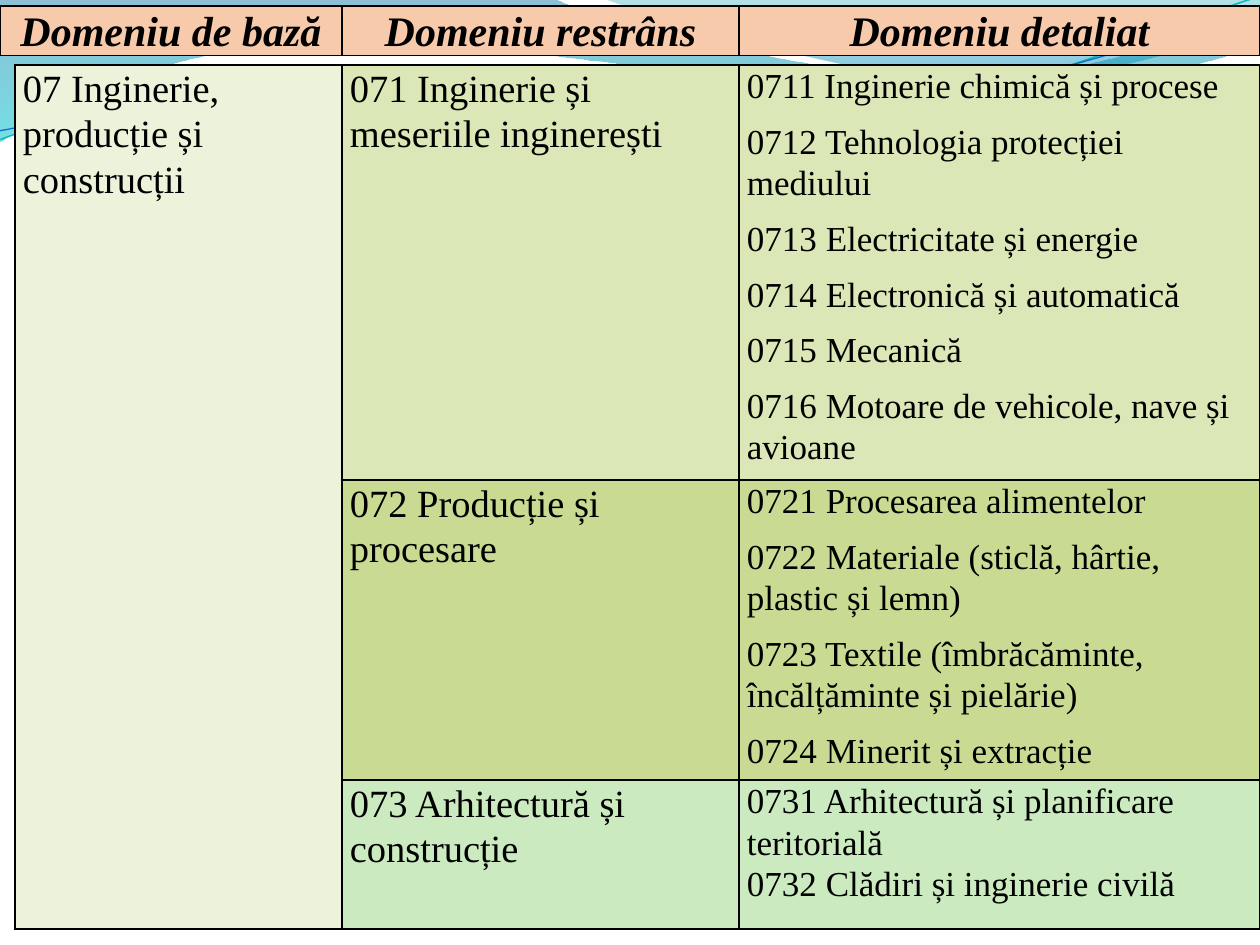
from lxml import etree
from pptx import Presentation
from pptx.dml.color import RGBColor as RGB
from pptx.enum.text import PP_ALIGN as Align
from pptx.oxml.ns import qn
from pptx.util import Pt

PX = 914400 / 126
FONT = "Times New Roman"
COLORS = {
    "ink": "000000", "header": "F7CAAC", "base": "EDF3DB",
    "engineering": "DBE7B6", "production": "C9DA92", "building": "CBEAC0",
    "deep": "0074A1", "cyan": "00C6CF", "teal": "00A1A9", "azure": "008BBF",
    "aqua": "0AB8BF", "blue": "0F6FC6",
}
HEADERS = ["Domeniu de bază", "Domeniu restrâns", "Domeniu detaliat"]
BASE = "07 Inginerie, producție și construcții"
FIELDS = [
    ("071 Inginerie și meseriile inginerești", "engineering", 415, [
        "0711 Inginerie chimică și procese",
        "0712 Tehnologia protecției mediului",
        "0713 Electricitate și energie",
        "0714 Electronică și automatică",
        "0715 Mecanică",
        "0716 Motoare de vehicole, nave și avioane"]),
    ("072 Producție și procesare", "production", 300, [
        "0721 Procesarea alimentelor",
        "0722 Materiale (sticlă, hârtie, plastic și lemn)",
        "0723 Textile (îmbrăcăminte, încălțăminte și pielărie)",
        "0724 Minerit și extracție"]),
    ("073 Arhitectură și construcție", "building", 149, [
        "0731 Arhitectură și planificare teritorială\v0732 Clădiri și inginerie civilă"]),
]
LOWER_WAVE = [
    (0, 0), (554, -1), (600, 21, 837, 79, 955, 79), (1075, 79, 1207, 33, 1260, 11),
    (1261, 45), (1239, 55, 1096, 96, 940, 94), (784, 94, 481, 35, 324, 43),
    (163, 45, 58, 105, -1, 142), (0, 0)]
UPPER_WAVE = [
    (604, -1), (641, 14, 859, 78, 969, 82), (1079, 87, 1211, 40, 1260, 26),
    (1260, 0), (604, -1)]
AQUA_LINE = [
    (-2, 110), (59, 90, 199, 52, 350, 53), (499, 53, 745, 117, 896, 114),
    (1049, 109, 1184, 45, 1260, 27)]
BLUE_LINE = [
    (-2, 101), (57, 94, 207, 57, 357, 58), (509, 58, 750, 112, 902, 108),
    (1052, 104, 1188, 52, 1262, 38)]


def px(n):
    return round(n * PX)


def rgb(name):
    return RGB.from_string(COLORS[name])


def write(tf, paragraphs, size=20, align=Align.LEFT, bold=False, italic=False):
    tf.word_wrap = True
    for i, text in enumerate(paragraphs):
        p = tf.add_paragraph() if i else tf.paragraphs[0]
        p.text = text
        p.alignment, p.line_spacing, p.space_after = align, 1.07, Pt(8)
        for r in p.runs:
            r.font.name, r.font.size = FONT, Pt(size)
            r.font.bold, r.font.italic = bold, italic
            r.font.color.rgb = rgb("ink")


class Deck:
    """Hold the slide style and add each kind of element to the current slide."""

    def __init__(self):
        self.prs = Presentation()
        self.prs.slide_width, self.prs.slide_height = px(1260), px(945)
        self.s = self.prs.slides.add_slide(self.prs.slide_layouts[6])

    def outline(self, steps, close):
        points = [(px(x), px(y)) for step in steps for x, y in zip(step[::2], step[1::2])]
        builder = self.s.shapes.build_freeform(*points[0])
        builder.add_line_segments(points[1:], close=close)
        sp = builder.convert_to_shape()
        sp.shadow.inherit = False
        segments = iter(list(sp._element.spPr.iter(qn("a:lnTo"))))
        for step in steps[1:]:
            segment = next(segments)
            if len(step) == 6:
                curve = etree.Element(qn("a:cubicBezTo"))
                segment.addprevious(curve)
                for part in (segment, next(segments), next(segments)):
                    curve.append(part[0])
                    part.getparent().remove(part)
        return sp

    def wave(self, steps, *stops):
        sp = self.outline(steps, True)
        sp.line.fill.background()
        sp.fill.gradient()
        sp.fill.gradient_angle = 270
        for stop, (position, color, _) in zip(sp.fill.gradient_stops, stops):
            stop.position = position
            stop.color.rgb = rgb(color)
        for clr, (_, _, alpha) in zip(sp._element.spPr.iter(qn("a:srgbClr")), stops):
            etree.SubElement(clr, qn("a:alpha"), val=str(alpha * 1000))

    def curve(self, steps, color, width):
        sp = self.outline(steps, False)
        sp.rotation = 357.3
        sp.fill.background()
        sp.line.color.rgb = rgb(color)
        sp.line.width = Pt(width)

    def table(self, x, y, cols, rows):
        frame = self.s.shapes.add_table(len(rows), len(cols), px(x), px(y),
                                        px(sum(cols)), px(sum(rows)))
        table = frame.table
        table.first_row = table.horz_banding = False
        for items, sizes, side in ((table.columns, cols, "width"), (table.rows, rows, "height")):
            for item, size in zip(items, sizes):
                setattr(item, side, px(size))
        return table

    def cell(self, cell, paragraphs, fill, inset=8, sides="LRTB", **style):
        cell.margin_left = cell.margin_right = px(inset)
        cell.margin_top = cell.margin_bottom = 0
        tc_pr = cell._tc.get_or_add_tcPr()
        for side in "LRTB":
            ln = etree.SubElement(tc_pr, qn("a:ln" + side), w=str(Pt(1)))
            if side in sides:
                solid = etree.SubElement(ln, qn("a:solidFill"))
                etree.SubElement(solid, qn("a:srgbClr"), val=COLORS["ink"])
            else:
                etree.SubElement(ln, qn("a:noFill"))
        cell.fill.solid()
        cell.fill.fore_color.rgb = rgb(fill)
        write(cell.text_frame, paragraphs, **style)


def main():
    deck = Deck()
    deck.wave(LOWER_WAVE, (0, "deep", 45), (1, "cyan", 55))
    deck.wave(UPPER_WAVE, (0, "teal", 30), (0.8, "azure", 45))
    deck.curve(AQUA_LINE, "aqua", 0.85)
    deck.curve(BLUE_LINE, "blue", 0.75)

    header = deck.table(0, 6, [342, 397, 521], [47])
    for i, title in enumerate(HEADERS):
        deck.cell(header.cell(0, i), [title], "header", inset=9, size=24,
                  align=Align.CENTER, bold=True, italic=True)

    body = deck.table(15, 65, [327, 397, 521], [field[2] for field in FIELDS])
    for i, (name, fill, _, details) in enumerate(FIELDS):
        deck.cell(body.cell(i, 0), [] if i else [BASE], "base", size=22,
                  sides=("LRT", "LR", "LRB")[i])
        deck.cell(body.cell(i, 1), [name], fill, size=22)
        deck.cell(body.cell(i, 2), details, fill)
    deck.prs.save("out.pptx")


if __name__ == "__main__":
    main()
